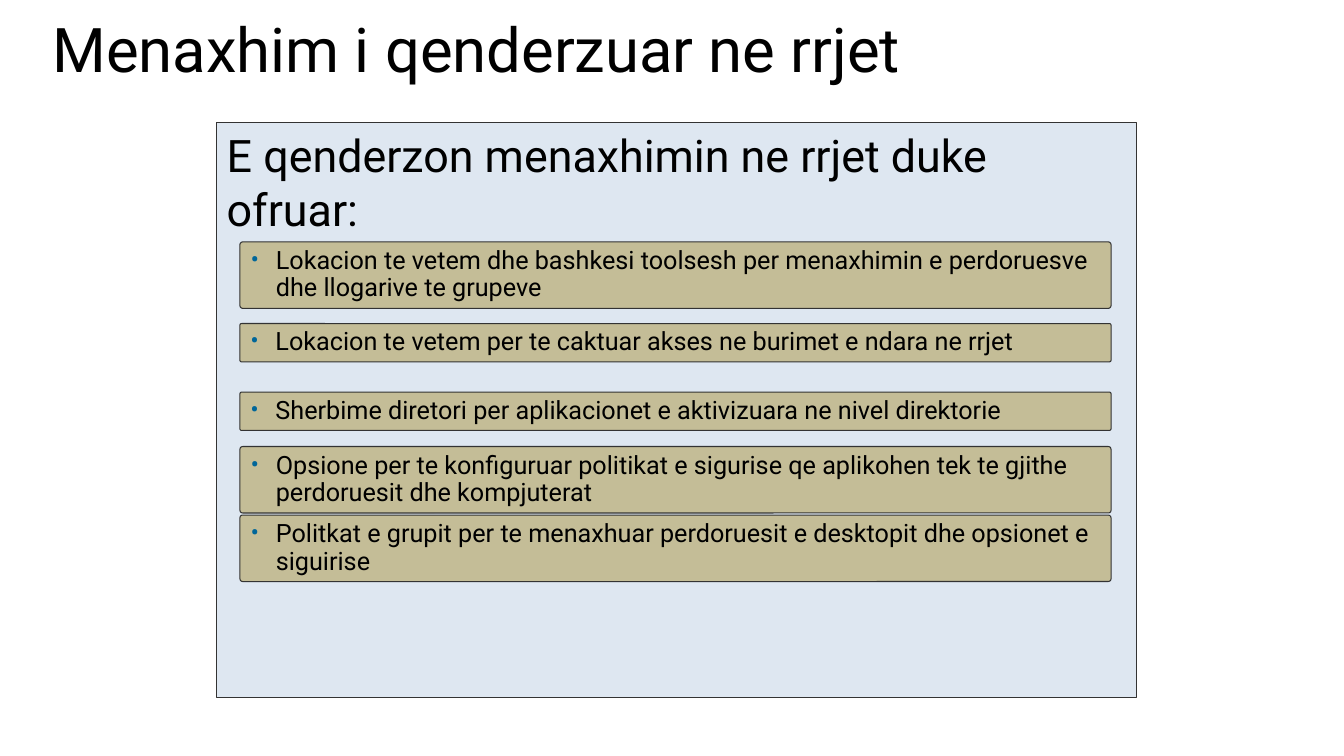
from lxml.etree import SubElement
from pptx import Presentation
from pptx.dml.color import RGBColor
from pptx.enum.shapes import MSO_SHAPE
from pptx.enum.text import MSO_ANCHOR, MSO_AUTO_SIZE, PP_ALIGN
from pptx.oxml.ns import qn
from pptx.util import Inches, Pt

FONT = "Roboto"
COLORS = {
    "text": "000000",
    "panel": "DEE7F1",
    "card": "C4BD97",
    "outline": "333333",
    "bullet": "006699",
}
TITLE = "Menaxhim i qenderzuar ne rrjet"
HEADING = "E qenderzon menaxhimin ne rrjet duke ofruar:"
ONE_LINE, TWO_LINES = 0.38, 0.66
CARDS = [
    (1.18, TWO_LINES, "Lokacion te vetem dhe bashkesi toolsesh per menaxhimin e perdoruesve dhe llogarive te grupeve"),
    (1.99, ONE_LINE, "Lokacion te vetem per te caktuar akses ne burimet e ndara ne rrjet"),
    (2.67, ONE_LINE, "Sherbime diretori per aplikacionet e aktivizuara ne nivel direktorie"),
    (3.21, TWO_LINES, "Opsione per te konfiguruar politikat e sigurise qe aplikohen tek te gjithe perdoruesit dhe kompjuterat"),
    (3.89, TWO_LINES, "Politkat e grupit per te menaxhuar perdoruesit e desktopit dhe opsionet e siguirise"),
]


def color(name):
    return RGBColor.from_string(COLORS[name])


def write(sp, text, size, spacing=1.0, anchor=MSO_ANCHOR.TOP):
    tf = sp.text_frame
    tf.word_wrap = True
    tf.vertical_anchor = anchor
    tf.text = text
    p = tf.paragraphs[0]
    p.alignment = PP_ALIGN.LEFT
    p.line_spacing = spacing
    r = p.runs[0]
    r.font.name = FONT
    r.font.size = Pt(size)
    r.font.color.rgb = color("text")
    return p


def add_box(s, kind, left, top, width, height, fill):
    sp = s.shapes.add_shape(kind, Inches(left), Inches(top), Inches(width), Inches(height))
    sp.shadow.inherit = False
    sp.fill.solid()
    sp.fill.fore_color.rgb = color(fill)
    sp.line.color.rgb = color("outline")
    sp.line.width = Pt(0.75)
    return sp


def add_bullet(p):
    pPr = p._p.get_or_add_pPr()
    pPr.set("marL", str(Inches(0.25)))
    pPr.set("indent", str(Inches(-0.25)))
    clr = SubElement(pPr, qn("a:buClr"))
    SubElement(clr, qn("a:srgbClr"), val=COLORS["bullet"])
    SubElement(pPr, qn("a:buFont"), typeface=FONT)
    SubElement(pPr, qn("a:buChar"), char="•")


def add_title(s, left, top, width, height):
    sp = s.shapes.add_textbox(Inches(left), Inches(top), Inches(width), Inches(height))
    write(sp, TITLE, 44, 0.8)


def add_card(s, left, top, width, height, text):
    sp = add_box(s, MSO_SHAPE.ROUNDED_RECTANGLE, left, top, width, height, "card")
    sp.adjustments[0] = 0.042
    p = write(sp, text, 18, 0.9, MSO_ANCHOR.MIDDLE)
    add_bullet(p)
    sp.text_frame.auto_size = MSO_AUTO_SIZE.SHAPE_TO_FIT_TEXT


def add_panel(s, left, top, width, height):
    sp = add_box(s, MSO_SHAPE.RECTANGLE, left, top, width, height, "panel")
    write(sp, HEADING, 32)
    for offset, card_height, text in CARDS:
        add_card(s, left + 0.23, top + offset, width - 0.48, card_height, text)


def main():
    prs = Presentation()
    prs.slide_width = Inches(13.33)
    prs.slide_height = Inches(7.5)
    s = prs.slides.add_slide(prs.slide_layouts[6])
    add_title(s, 0.42, 0.2, 12.6, 1.16)
    add_panel(s, 2.15, 1.22, 9.12, 5.7)
    prs.save("out.pptx")


if __name__ == "__main__":
    main()
